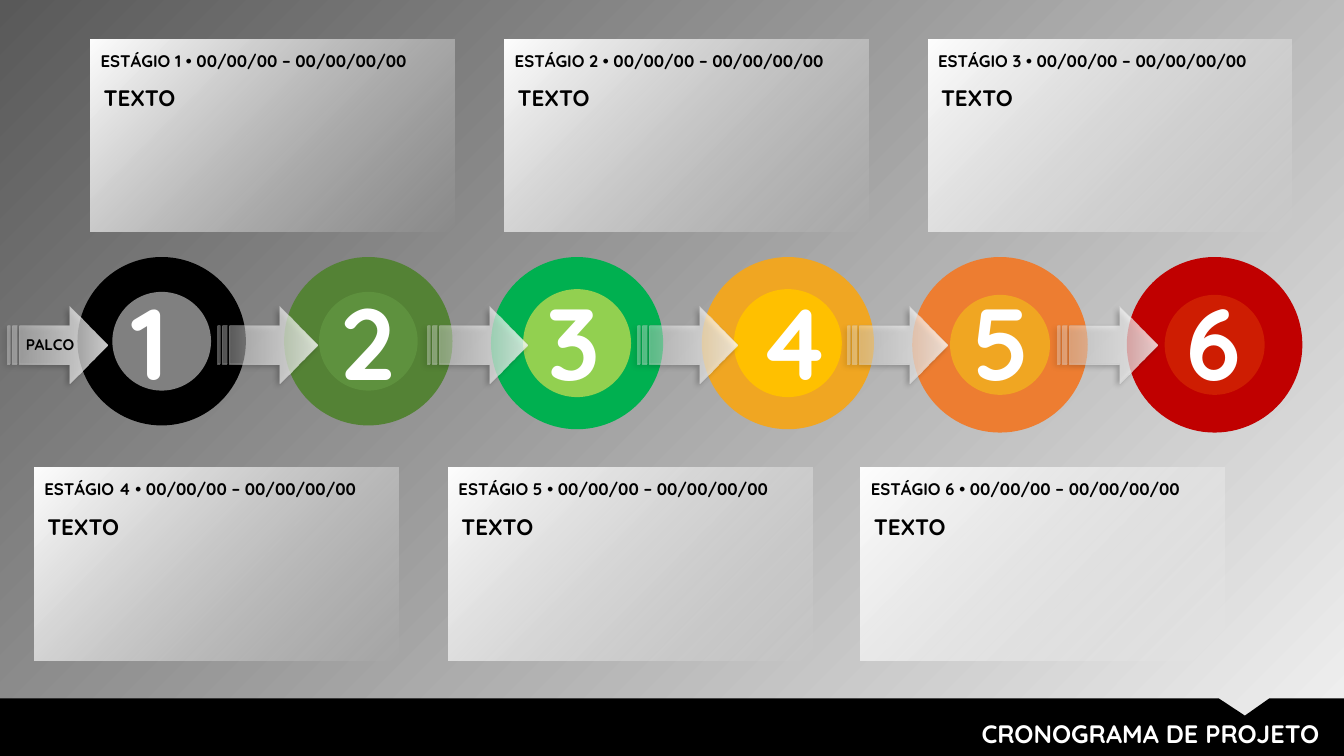
"""Build a six-stage project timeline slide on a 160 by 90 grid."""
from lxml import etree
from pptx import Presentation
from pptx import util as u
from pptx.dml.color import RGBColor
from pptx.enum import shapes, text
from pptx.oxml import ns

COLORS = {
    "black": "000000", "white": "FFFFFF", "mist": "F2F2F2", "slate": "595959",
    "edge": "BFBFBF", "grey": "808080", "forest": "548235", "moss": "5E913E",
    "green": "00B050", "lime": "92D050", "amber": "F0A622", "gold": "FFC000",
    "orange": "ED7D31", "red": "C00000", "scarlet": "CE1D02",
}


class Deck:
    """Hold the style and the current slide, and draw each kind of element."""

    font = "Quicksand"
    cols, rows = 160, 90

    def __init__(self):
        """Open a widescreen presentation with one title-only slide."""
        self.prs = Presentation()
        self.prs.slide_width, self.prs.slide_height = u.Inches(40 / 3), u.Inches(7.5)
        self.s = self.prs.slides.add_slide(self.prs.slide_layouts[5])

    def box(self, x, y, w, h):
        """Turn columns and rows into slide lengths."""
        dx = self.prs.slide_width / self.cols
        dy = self.prs.slide_height / self.rows
        return [u.Emu(round(v)) for v in (x * dx, y * dy, w * dx, h * dy)]

    def color(self, name):
        """Look up a colour by name."""
        return RGBColor.from_string(COLORS[name])

    def gradient(self, fill, names, angle):
        """Give a fill a two-stop linear gradient."""
        fill.gradient()
        fill.gradient_angle = angle
        for stop, name, position in zip(fill.gradient_stops, names, (0, 1)):
            stop.color.rgb = self.color(name)
            stop.position = position

    def opacity(self, sp, shares):
        """Set the opacity, in percent, of a shape's colours in order."""
        for clr, share in zip(sp.element.spPr.iter(ns.qn("a:srgbClr")), shares):
            etree.SubElement(clr, ns.qn("a:alpha"), val=str(share * 1000))

    def drop_shadow(self, effects, blur, dist, angle, name, share):
        """Add an outer shadow to an effect list."""
        shadow = etree.SubElement(
            effects, ns.qn("a:outerShdw"), blurRad=str(u.Pt(blur)),
            dist=str(u.Pt(dist)), dir=str(angle * 60000), algn="tl", rotWithShape="0")
        clr = etree.SubElement(shadow, ns.qn("a:srgbClr"), val=COLORS[name])
        etree.SubElement(clr, ns.qn("a:alpha"), val=str(share * 1000))

    def shape(self, kind, x, y, w, h, fill=None):
        """Draw a preset shape without line or shadow."""
        sp = self.s.shapes.add_shape(kind, *self.box(x, y, w, h))
        sp.shadow.inherit = False
        sp.line.fill.background()
        if fill:
            sp.fill.solid()
            sp.fill.fore_color.rgb = self.color(fill)
        return sp

    def words(self, tf, content, size, color, align=text.PP_ALIGN.LEFT, shadow=False):
        """Put one bold run into a text frame."""
        tf.word_wrap = True
        tf.auto_size = text.MSO_AUTO_SIZE.SHAPE_TO_FIT_TEXT
        tf.vertical_anchor = text.MSO_ANCHOR.TOP
        p = tf.paragraphs[0]
        p.alignment = align
        r = p.add_run()
        r.text = content
        r.font.size, r.font.bold, r.font.name = u.Pt(size), True, self.font
        r.font.color.rgb = self.color(color)
        if shadow:
            effects = etree.Element(ns.qn("a:effectLst"))
            self.drop_shadow(effects, 4, 3, 45, "black", 40)
            r._r.rPr.find(ns.qn("a:solidFill")).addnext(effects)

    def label(self, content, x, y, w, h, size, color="black"):
        """Draw a text box; black words carry a soft shadow."""
        sp = self.s.shapes.add_textbox(*self.box(x, y, w, h))
        self.words(sp.text_frame, content, size, color, shadow=color == "black")

    def footer(self, content):
        """Draw the notched footer band and set the slide title on it."""
        top = 83.15
        points = [(0, top), (145.1, top), (148.2, 85.2), (151.1, top),
                  (self.cols, top), (self.cols, self.rows), (0, self.rows)]
        corners = [self.box(x, y, 0, 0)[:2] for x, y in points]
        outline = self.s.shapes.build_freeform(*corners[0])
        outline.add_line_segments(corners[1:], close=True)
        band = outline.convert_to_shape()
        band.shadow.inherit = False
        band.fill.solid()
        band.fill.fore_color.rgb = self.color("black")
        band.line.fill.background()
        title = self.s.shapes.title
        title.left, title.top, title.width, title.height = self.box(76.9, 84.95, 81.35, 4.8)
        self.words(title.text_frame, content, 18, "white", text.PP_ALIGN.RIGHT)
        band.element.addnext(title.element)

    def card(self, number, x, y):
        """Draw a fading stage card with its heading and text."""
        sp = self.shape(shapes.MSO_SHAPE.ROUNDED_RECTANGLE, x, y, 43.3, 22.9)
        sp.adjustments[0] = 0
        self.gradient(sp.fill, ("mist", "white"), 135)
        self.opacity(sp, (0, 100))
        self.label("TEXTO", x + 0.35, y + 4.75, 42.7, 4.4, 16)
        self.label(f"ESTÁGIO {number} • 00/00/00 – 00/00/00/00", x, y + 0.75, 43.5, 3.6, 12)

    def ring(self, x, outer, inner, colors):
        """Draw two concentric discs around column x."""
        y = 30.6 + outer / 2
        for size, fill in zip((outer, inner), colors):
            self.shape(shapes.MSO_SHAPE.OVAL, x - size / 2, y - size / 2, size, size, fill)

    def arrow(self, x, y):
        """Draw a translucent striped arrow."""
        sp = self.shape(shapes.MSO_SHAPE.STRIPED_RIGHT_ARROW, x, y, 11.9, 9.1)
        self.gradient(sp.fill, ("white", "white"), 0)
        sp.line.color.rgb = self.color("edge")
        sp.line.width = u.Pt(0.25)
        self.opacity(sp, (30, 80, 50))
        effects = sp.element.spPr.find(ns.qn("a:effectLst"))
        self.drop_shadow(effects, 4, 3, 135, "black", 40)


def main():
    """Compose the timeline and save it."""
    deck = Deck()
    deck.gradient(deck.s.background.fill, ("mist", "slate"), 135)
    deck.footer("CRONOGRAMA DE PROJETO")

    card_rows = [(4.65, (10.8, 60.1, 110.5)), (55.7, (4.1, 53.4, 102.5))]
    places = [(x, y) for y, columns in card_rows for x in columns]
    for number, (x, y) in enumerate(places, 1):
        deck.card(number, x, y)

    stages = [
        (19.25, 20.05, 11.75, ("black", "grey"), 14.5),
        (43.85, 20.05, 11.75, ("forest", "moss"), 39.35),
        (68.7, 20.5, 12.85, ("green", "lime"), 63.95),
        (93.8, 20.5, 12.85, ("amber", "gold"), 89.15),
        (119.05, 20.9, 11.9, ("orange", "amber"), 114.6),
        (144.6, 20.9, 11.9, ("red", "scarlet"), 140.05),
    ]
    for x, outer, inner, colors, _ in stages:
        deck.ring(x, outer, inner, colors)
    for i in range(len(stages)):
        deck.arrow(0.95 + 25 * i, 36.5)
    for number, stage in enumerate(stages, 1):
        deck.label(str(number), stage[-1], 32.75, 11.05, 15.7, 72, "white")
    deck.label("PALCO", 1.9, 39.35, 9.5, 3.5, 11)
    deck.prs.save("out.pptx")


if __name__ == "__main__":
    main()
